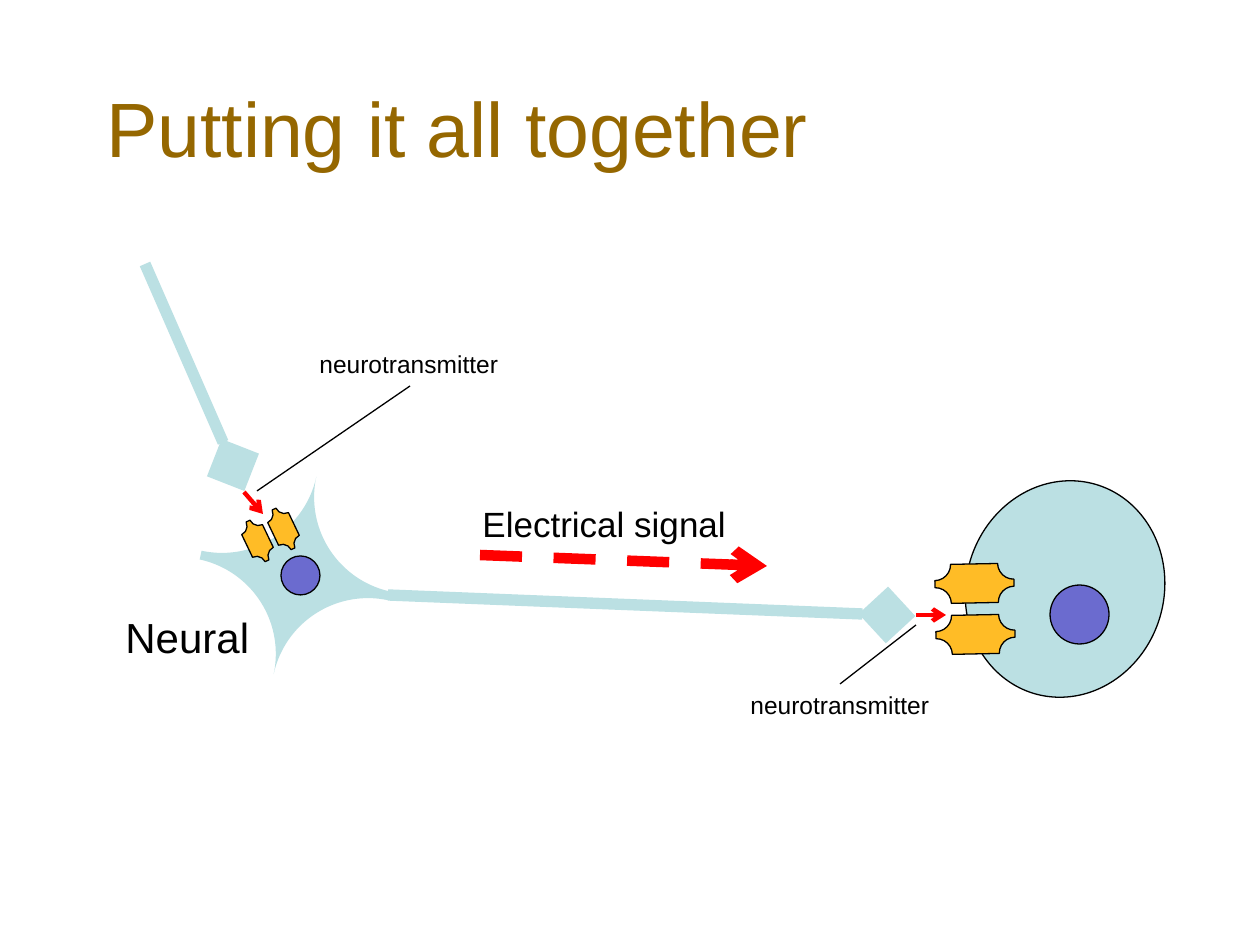
from lxml import etree
from pptx import Presentation
from pptx.dml.color import RGBColor
from pptx.enum.dml import MSO_LINE
from pptx.enum.shapes import MSO_CONNECTOR, MSO_SHAPE
from pptx.enum.text import MSO_ANCHOR, MSO_AUTO_SIZE
from pptx.oxml.ns import qn
from pptx.util import Emu, Pt

PLAQUE, OVAL = MSO_SHAPE.PLAQUE, MSO_SHAPE.OVAL
STRAIGHT, DASH = MSO_CONNECTOR.STRAIGHT, MSO_LINE.DASH
BOTTOM, TOP = MSO_ANCHOR.BOTTOM, MSO_ANCHOR.TOP
GROW, NO_GROW = MSO_AUTO_SIZE.SHAPE_TO_FIT_TEXT, MSO_AUTO_SIZE.NONE
SCALE = 914400 / 126
FONT = "Arial"
COLORS = {"title": "956700", "cell": "BBE0E3", "nucleus": "6B6BCF",
          "receptor": "FFBC26", "signal": "FF0000", "ink": "000000"}

TITLE = ("Putting it all together", (94, 53, 1071, 126), 44)
LABELS = [
    ("Neural", (113, 605, 150, 63), 24),
    ("Electrical signal", (470, 496, 271, 55), 20),
    ("neurotransmitter", (738, 684, 205, 43), 14),
    ("neurotransmitter", (307, 343, 205, 43), 14),
]
CELLS = [
    (PLAQUE, (194, 479, 202, 193), 282.2, "cell", 0.5, False),
    (OVAL, (281, 556, 39, 39), 0, "nucleus", None, True),
    (OVAL, (956, 490, 218, 198), 106.4, "cell", None, True),
    (OVAL, (1050, 585, 59, 59), 106.4, "nucleus", None, True),
]
RECEPTORS = [
    ((955, 544, 39, 79), 88.9),
    ((956, 595, 39, 79), 88.9),
    ((272, 507, 23, 44), 154.5),
    ((246, 519, 23, 44), 154.5),
]
AXONS = [(388, 595, 887, 615), (145, 264, 233, 465)]
SIGNAL = (480, 555, 767, 566)
RELEASES = [(916, 615, 946, 615), (244, 492, 263, 514)]
LEADERS = [(840, 684, 916, 625), (257, 491, 410, 386)]


def px(*values):
    return [Emu(round(v * SCALE)) for v in values]


def rgb(name):
    return RGBColor.from_string(COLORS[name])


def add_text(text, box, size, color="ink", anchor=TOP, wrap=False):
    tf = slide.shapes.add_textbox(*px(*box)).text_frame
    tf.text = text
    tf.word_wrap = wrap
    tf.auto_size = NO_GROW if wrap else GROW
    tf.vertical_anchor = anchor
    font = tf.paragraphs[0].runs[0].font
    font.name, font.size = FONT, Pt(size)
    font.color.rgb = rgb(color)


def add_part(kind, box, angle, color, adj=None, outlined=True):
    sp = slide.shapes.add_shape(kind, *px(*box))
    sp.shadow.inherit = False
    sp.rotation = angle
    if adj is not None:
        sp.adjustments[0] = adj
    sp.fill.solid()
    sp.fill.fore_color.rgb = rgb(color)
    if outlined:
        sp.line.color.rgb = rgb("ink")
        sp.line.width = Pt(0.75)
    else:
        sp.line.fill.background()


def add_line(ends, color, width, head=None, head_size="med", dash=None):
    cxn = slide.shapes.add_connector(STRAIGHT, *px(*ends))
    cxn.line.color.rgb = rgb(color)
    cxn.line.width = Pt(width)
    if dash:
        cxn.line.dash_style = dash
    if head:
        etree.SubElement(cxn.line._get_or_add_ln(), qn("a:tailEnd"),
                         type=head, w=head_size, len=head_size)
    etree.SubElement(cxn._element.spPr, qn("a:effectLst"))


prs = Presentation()
prs.slide_width, prs.slide_height = px(1260, 945)
slide = prs.slides.add_slide(prs.slide_layouts[6])

add_text(*TITLE, color="title", anchor=BOTTOM, wrap=True)
for cell in CELLS:
    add_part(*cell)
for box, angle in RECEPTORS:
    add_part(PLAQUE, box, angle, "receptor", 0.41)
for ends in AXONS:
    add_line(ends, "cell", 6.5, "diamond", "lg")
add_line(SIGNAL, "signal", 6, "arrow", dash=DASH)
for ends in RELEASES:
    add_line(ends, "signal", 2.5, "arrow")
for ends in LEADERS:
    add_line(ends, "ink", 0.75)
for label in LABELS:
    add_text(*label)

prs.save("out.pptx")
